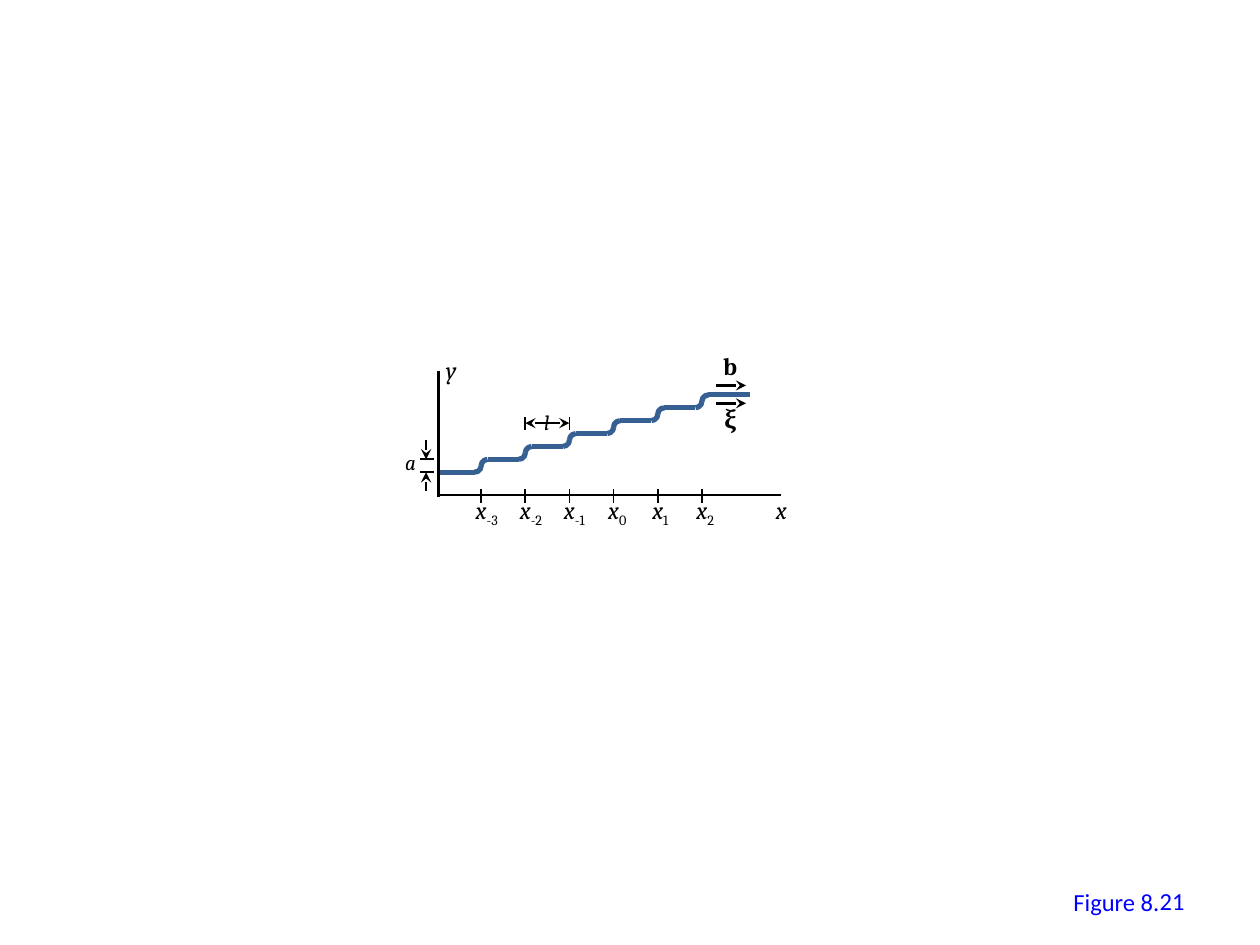
from lxml import etree
from pptx import Presentation
from pptx import util as u
from pptx.dml.color import RGBColor
from pptx.enum import shapes, text
from pptx.oxml.ns import qn

COLORS = {"ink": "000000", "dislocation": "376092", "caption": "0000FF"}

deck = Presentation()
deck.slide_width, deck.slide_height = u.Cm(25.4), u.Cm(19.05)
page = deck.slides.add_slide(deck.slide_layouts[6])


def add_line(x1, y1, x2, y2, width=1, color="ink", arrows=()):
    """Draw a line; arrows holds "headEnd" (start) and/or "tailEnd" (finish)."""
    line = page.shapes.add_connector(
        shapes.MSO_CONNECTOR.STRAIGHT, u.Cm(x1), u.Cm(y1), u.Cm(x2), u.Cm(y2))
    line.line.color.rgb = RGBColor.from_string(COLORS[color])
    line.line.width = u.Pt(width)
    properties = line._element.spPr
    for end in arrows:
        etree.SubElement(properties.find(qn("a:ln")), qn(f"a:{end}"), type="stealth")
    etree.SubElement(properties, qn("a:effectLst"))


def add_label(words, left, top, width, height=0.86, subscript="", color="ink", **font):
    box = page.shapes.add_textbox(u.Cm(left), u.Cm(top), u.Cm(width), u.Cm(height))
    box.text_frame.word_wrap = False
    box.text_frame.auto_size = text.MSO_AUTO_SIZE.SHAPE_TO_FIT_TEXT
    para = box.text_frame.paragraphs[0]
    look = {"name": "Cambria", "size": u.Pt(14)} | font
    for part in filter(None, (words, subscript)):
        span = para.add_run()
        span.text = part
        for key, value in look.items():
            setattr(span.font, key, value)
        span.font.color.rgb = RGBColor.from_string(COLORS[color])
    if subscript:
        span.font.italic = False
        span._r.get_or_add_rPr().set("baseline", "-25000")
    return box


# Figure caption
caption_font = {"name": "Calibri", "color": "caption"}
add_label("Figure 8.", 21.39, 17.75, 2.26, **caption_font)
number = add_label("21", 18.21, 17.65, 5.92, 1.02, **caption_font).text_frame
number.word_wrap = True
number.auto_size = text.MSO_AUTO_SIZE.NONE
number.vertical_anchor = text.MSO_ANCHOR.MIDDLE
number.paragraphs[0].alignment = text.PP_ALIGN.RIGHT

# Axes
axis_y = 9.98
add_line(15.75, axis_y, 8.81, axis_y, 1.5)
add_line(8.84, 7.47, 8.84, 10.01, 1.5)
add_label("y", 8.74, 7.04, 0.86, italic=True)
add_label("x", 15.39, 9.86, 0.86, italic=True)

# Staircase of kinks, each with its tick and label on the x axis
first_x, first_top = 9.7, 9.26
spacing, rise = 0.89, 0.26
tread_inner, tread_outer = 0.13, 0.51
stair = {"width": 3, "color": "dislocation"}

add_line(8.86, first_top + rise, 9.4, first_top + rise, **stair)
for step, index in enumerate(("-3", "-2", "-1", "0", "1", "2")):
    x, top = first_x + step * spacing, first_top - step * rise
    add_line(x + tread_inner, top, x + tread_outer, top, **stair)
    for left, turn in ((x, 270), (x - rise, 90)):
        arc = page.shapes.add_shape(
            shapes.MSO_SHAPE.ARC, u.Cm(left), u.Cm(top), u.Cm(rise), u.Cm(rise))
        arc.rotation = turn
        arc.shadow.inherit = False
        arc.fill.background()
        arc.line.color.rgb = RGBColor.from_string(COLORS["dislocation"])
        arc.line.width = u.Pt(3)
    add_line(x - tread_outer, top + rise, x - tread_inner, top + rise, **stair)
    add_line(x, 10.13, x, 9.86)
    add_label("x", x - 0.36, 9.86, 1.14 if len(index) > 1 else 1.02,
              subscript=index, italic=True)
add_line(14.58, top, 15.11, top, **stair)

# Burgers vector and line direction
for symbol, left, label_top, arrow_y in (("b", 14.33, 6.96, 7.77), ("ξ", 14.35, 8.03, 8.13)):
    add_line(14.43, arrow_y, 15.04, arrow_y, 1.5, arrows=["tailEnd"])
    add_label(symbol, left, label_top, 0.78, bold=True)

# Kink spacing l
l_left, l_right = first_x + spacing, first_x + 2 * spacing
add_line(l_left, 8.53, l_right, 8.53, arrows=["headEnd", "tailEnd"])
for x in (l_left, l_right):
    add_line(x, 8.66, x, 8.41)
add_label("l", 10.72, 8.13, 0.74, 0.76, size=u.Pt(12), italic=True)

# Kink height a
add_label("a", 7.92, 8.94, 0.84, 0.76, size=u.Pt(12), italic=True)
for y, arrow_length in ((first_top, -0.38), (first_top + rise, 0.38)):
    add_line(8.74, y, 8.46, y)
    add_line(8.59, y, 8.59, y + arrow_length, arrows=["headEnd"])

deck.save("out.pptx")
